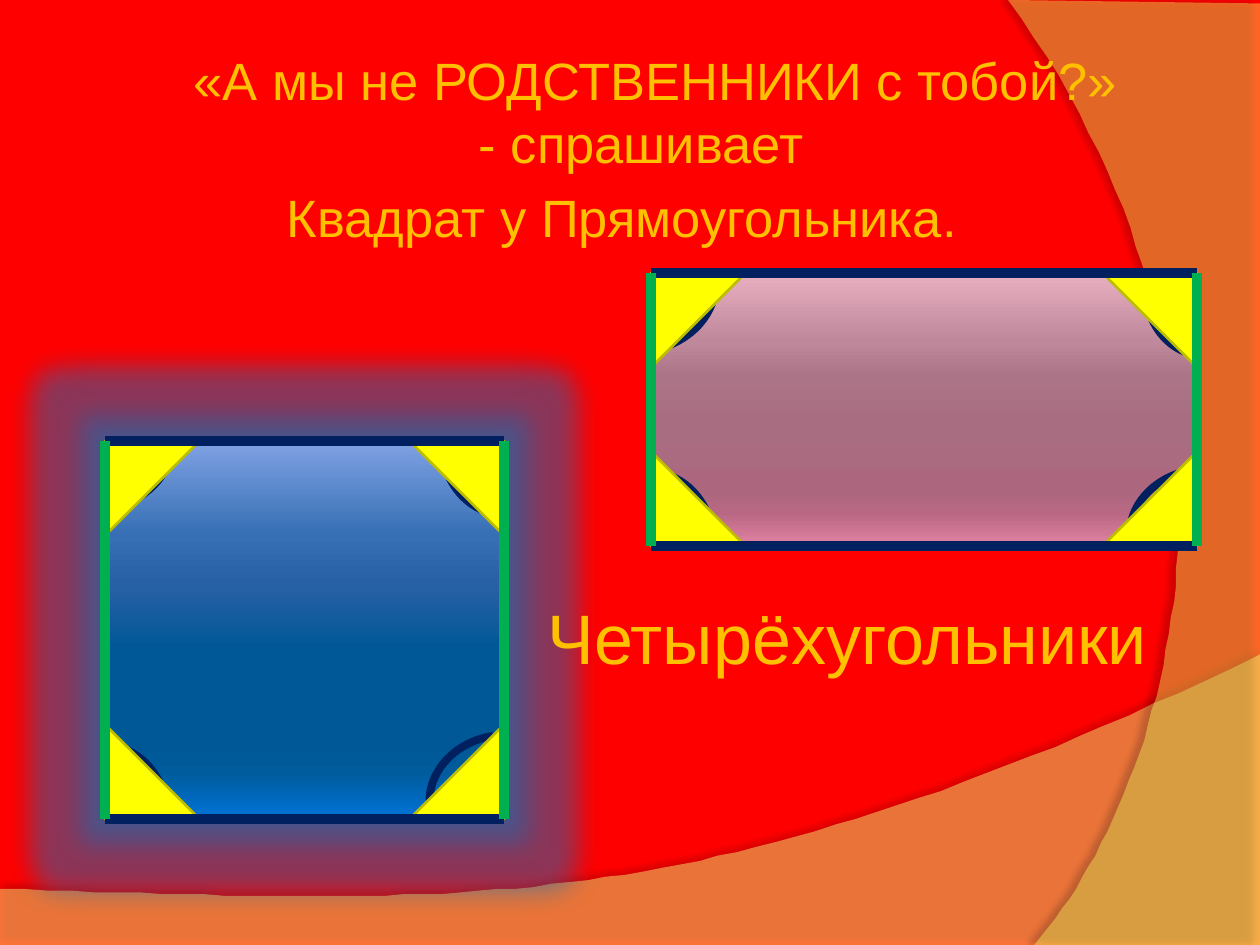
import pptx
import pptx.util
import pptx.dml.color
import pptx.enum.shapes
import pptx.enum.text
import pptx.oxml
import pptx.oxml.ns

Pt = pptx.util.Pt
Kind = pptx.enum.shapes.MSO_SHAPE
NS = pptx.oxml.ns.nsdecls("a")
NAVY, GREEN, YELLOW, GOLD = "002060", "00B050", "FFFF00", "FFC000"
BLUES = [(0, "80A2E4"), (25, "366FB4"), (38, "2860A6"), (55, "005896"),
         (80, "005795"), (88, "005C9D"), (100, "0073D9")]
PINKS = [(0, "E7AFC0"), (25, "C0899B"), (38, "AC7587"), (55, "A86D81"),
         (80, "AC677E"), (88, "B96884"), (100, "E182A2")]


def paint(form, color):
    """Set a fill or line format to a solid hex colour."""
    form.solid()
    form.fore_color.rgb = pptx.dml.color.RGBColor.from_string(color)


def tint(color, alpha):
    """Return the XML of a hex colour with an opacity in percent."""
    return f'<a:srgbClr val="{color}"><a:alpha val="{alpha * 1000}"/></a:srgbClr>'


def glow(color, alpha, size):
    """Return the XML of a glow."""
    return f'<a:glow rad="{Pt(size)}">{tint(color, alpha)}</a:glow>'


def shade(color, alpha, blur, dist=0, turn=0):
    """Return the XML of an outer shadow."""
    return (f'<a:outerShdw blurRad="{Pt(blur)}" dist="{Pt(dist)}" dir="{turn * 60000}" '
            f'algn="ctr" rotWithShape="0">{tint(color, alpha)}</a:outerShdw>')


def effect(item, body=""):
    """Give a shape or connector its list of effects."""
    props = item._element.spPr
    for old in props.findall(pptx.oxml.ns.qn("a:effectLst")):
        props.remove(old)
    props.append(pptx.oxml.parse_xml(f"<a:effectLst {NS}>{body}</a:effectLst>"))


def shape(slide, kind, box, fill=None, line=None, width=1.5, turn=0):
    """Add a preset shape with plain fill and line."""
    item = slide.shapes.add_shape(kind, *map(Pt, box))
    item.shadow.inherit = False
    item.rotation = turn
    if fill:
        paint(item.fill, fill)
    else:
        item.fill.background()
    if line:
        paint(item.line.fill, line)
        item.line.width = Pt(width)
    else:
        item.line.fill.background()
    return item


def text(slide, box, lines, size=30, color=GOLD, font="Arial", align=None,
         left=0, indent=0, before=0):
    """Add a text box with one paragraph for each line."""
    frame = slide.shapes.add_textbox(*map(Pt, box)).text_frame
    frame.word_wrap = True
    for i, words in enumerate(lines):
        para = frame.add_paragraph() if i else frame.paragraphs[0]
        para.alignment, para.space_before = align, Pt(before)
        props = para._p.get_or_add_pPr()
        props.set("marL", str(Pt(left)))
        props.set("indent", str(Pt(indent)))
        run = para.add_run()
        run.text = words
        run.font.size, run.font.name = Pt(size), font
        paint(run.font.fill, color)


def curve(a, b, c, d, steps=60):
    """Return points along a cubic curve."""
    spots = []
    for i in range(steps + 1):
        t = i / steps
        u = 1 - t
        spots.append(tuple(u**3 * p + 3 * u * u * t * q + 3 * u * t * t * r + t**3 * s
                           for p, q, r, s in zip(a, b, c, d)))
    return spots


def wave(slide, spots, color, alpha, shadow):
    """Add a see-through curved band with a shadow."""
    pen = slide.shapes.build_freeform(*spots[0], scale=float(Pt(1)))
    pen.add_line_segments(spots[1:], close=True)
    item = pen.convert_to_shape()
    paint(item.fill, color)
    clr = item._element.spPr.find(".//" + pptx.oxml.ns.qn("a:srgbClr"))
    clr.append(pptx.oxml.parse_xml(f'<a:alpha {NS} val="{alpha * 1000}"/>'))
    item.line.fill.background()
    effect(item, shadow)


def backdrop(slide, wide, high):
    """Paint the background and its two waves."""
    paint(slide.background.fill, "FF0000")
    low = curve((wide, 374.4), (402.5, 524.9), (281.5, 517.7), (0, 507.6))
    wave(slide, [(0, high), (wide, high)] + low, "FFFF7F", 45,
         shade("000000", 35, 4, 3.5, 270))
    side = curve((591, high), (673, 445.7), (733, 216), (576, 0))
    wave(slide, [(wide, 1.5), (wide, high)] + side, "FFFF5E", 40,
         shade("000000", 45, 4, 4, 180))


def panel(slide, box, stops, body=""):
    """Add a rectangle with a gradient from top to bottom."""
    item = shape(slide, Kind.RECTANGLE, box, "FFFFFF")
    marks = "".join(f'<a:gs pos="{at * 1000}"><a:srgbClr val="{color}"/></a:gs>'
                    for at, color in stops)
    props = item._element.spPr
    props.replace(props.find(pptx.oxml.ns.qn("a:solidFill")), pptx.oxml.parse_xml(
        f'<a:gradFill {NS}><a:gsLst>{marks}</a:gsLst>'
        '<a:lin ang="5400000" scaled="0"/></a:gradFill>'))
    effect(item, body)


def arcs(slide, box, spots):
    """Add corner arcs at offsets from the box."""
    for x, y, turn in spots:
        shape(slide, Kind.ARC, (box[0] + x, box[1] + y, 72, 84), None, NAVY, 4.5, turn)


def corners(slide, box, side=54):
    """Put a right triangle into each corner of the box."""
    x, y, w, h = box
    right, low = x + w - side, y + h - side
    spots = [(x, low, 0), (right, low, 270), (right, y, 180), (x, y, 90)]
    for left, top, turn in spots:
        shape(slide, Kind.RIGHT_TRIANGLE, (left, top, side, side), YELLOW, "BDBD00", turn=turn)


def edges(slide, box):
    """Draw navy level sides and green upright sides."""
    x, y, w, h = box
    right, low = x + w, y + h
    sides = [(x, y, right, y, NAVY), (x, low, right, low, NAVY),
             (x, y, x, low, GREEN), (right, y, right, low, GREEN)]
    for *ends, color in sides:
        item = slide.shapes.add_connector(
            pptx.enum.shapes.MSO_CONNECTOR.STRAIGHT, *map(Pt, ends))
        paint(item.line.fill, color)
        item.line.width = Pt(6)
        effect(item)


def figure(slide, box, stops, spots, body=""):
    """Build a four-sided figure with marked angles and sides."""
    panel(slide, box, stops, body)
    arcs(slide, box, spots)
    corners(slide, box)
    edges(slide, box)


def main():
    """Build and save the slide."""
    deck = pptx.Presentation()
    deck.slide_width, deck.slide_height = Pt(720), Pt(540)
    slide = deck.slides.add_slide(deck.slide_layouts[6])
    backdrop(slide, 720, 540)
    text(slide, (60, 24, 588, 126),
         ["\t «А мы не РОДСТВЕННИКИ с тобой?» - спрашивает ", "Квадрат у Прямоугольника."],
         align=pptx.enum.text.PP_ALIGN.CENTER, left=33, indent=-30, before=6)
    figure(slide, (60, 252, 228, 216), BLUES,
           [(-36, 174, 0), (191.3, 162, 261.2), (192, -42, 180), (-40, -39.6, 86.5)],
           glow("0075C0", 40, 28) + shade("2A75C8", 40, 9))
    figure(slide, (372, 156, 312, 156), PINKS,
           [(-40.8, -33.6, 77.1), (282.5, -36.5, 189.5), (279.6, 106, 264.2), (-36, 114, 0)])
    text(slide, (306, 336, 366, 55.4), ["Четырёхугольники"], size=40)
    deck.save("out.pptx")


if __name__ == "__main__":
    main()
